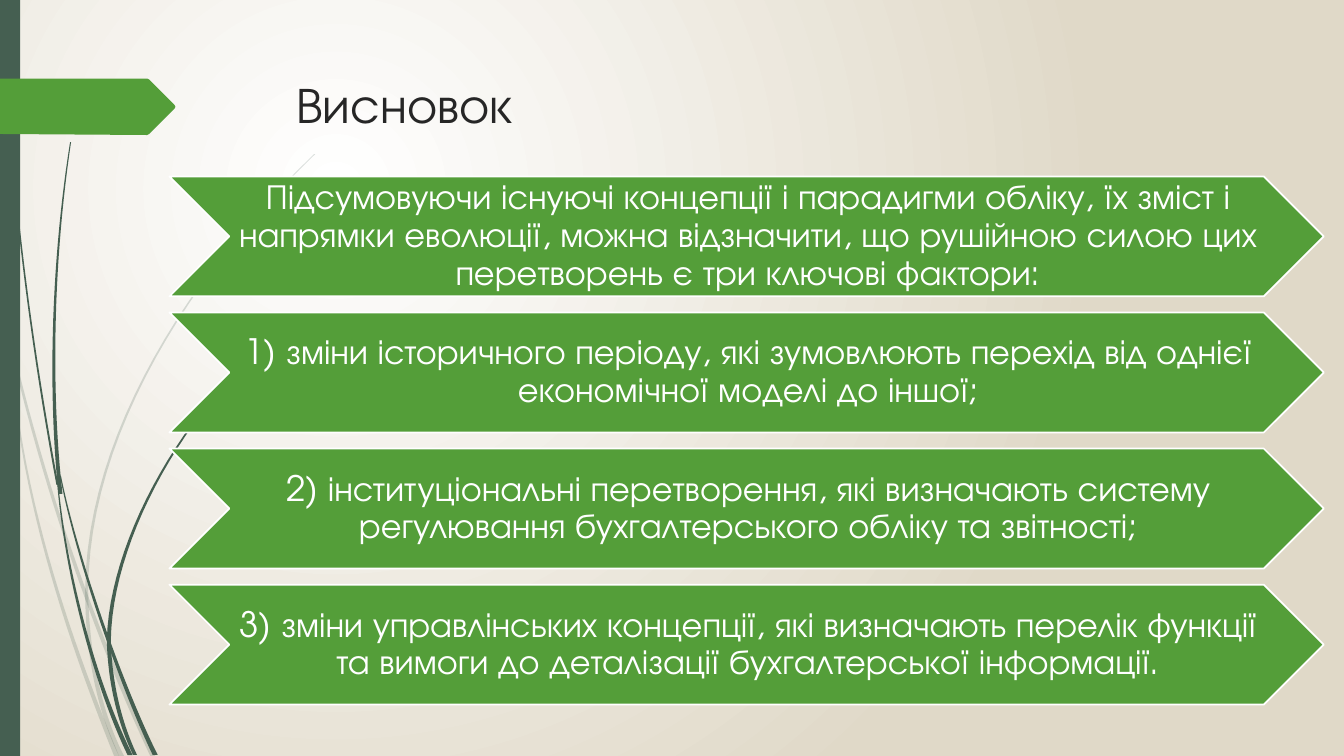
from dataclasses import dataclass

from lxml import etree
from pptx import Presentation
from pptx.dml.color import RGBColor
from pptx.enum.shapes import MSO_SHAPE
from pptx.enum.text import MSO_ANCHOR, PP_ALIGN
from pptx.oxml.ns import qn
from pptx.shapes.autoshape import Shape
from pptx.slide import Slide
from pptx.util import Inches, Pt

RECT = MSO_SHAPE.RECTANGLE
CHEVRON = MSO_SHAPE.CHEVRON
TOP, MIDDLE = MSO_ANCHOR.TOP, MSO_ANCHOR.MIDDLE
LEFT, CENTER = PP_ALIGN.LEFT, PP_ALIGN.CENTER

FONT = "TeX Gyre Adventor"
COLORS = {"white": "FFFFFF", "sand": "E0D9C8", "pine": "455F51", "green": "549E39", "ink": "262626"}
STEPS = 24

Point = tuple[float, float]


@dataclass
class Blade:
    start: Point
    lead: Point
    bend: Point
    end: Point
    tip: float = 0.01
    base: float = 0.04
    alpha: int = 100


@dataclass
class Label:
    text: str
    left: float
    top: float
    width: float
    height: float
    size: int
    color: str
    align: PP_ALIGN = CENTER
    anchor: MSO_ANCHOR = MIDDLE
    inset: tuple[float, float, float, float] = (0.03, 0.02, 0, 0.02)
    spacing: float = 0.9


BLADES = (
    Blade((0, 2.9), (0.3, 4.4), (0.85, 6.1), (1.52, 7.51), 0.02, 0.05, 20),
    Blade((0.11, 3.5), (0.2, 5), (0.75, 6.5), (1.16, 7.51), 0.01, 0.05, 20),
    Blade((3.12, 1.53), (1.9, 2.7), (0.87, 4.3), (0.86, 5.85), 0.01, 0.03, 20),
    Blade((0.86, 5.85), (0.86, 6.5), (1, 7.1), (1.21, 7.51), 0.03, 0.05, 20),
    Blade((0.03, 0), (0.08, 1.6), (0.27, 3.2), (0.57, 4.81), 0.01, 0.02),
    Blade((0.6, 4.72), (0.75, 5.5), (1.2, 6.8), (1.54, 7.49), 0.01, 0.05),
    Blade((0.57, 4.77), (0.65, 5.7), (0.95, 6.8), (1.29, 7.49), 0.01, 0.05),
    Blade((0.7, 1.41), (0.53, 2.5), (0.48, 3.8), (0.6, 4.9), 0.01, 0.04),
    Blade((2.6, 3.44), (1.75, 4.2), (1.1, 5.4), (1.08, 6.35), 0.01, 0.04),
    Blade((1.08, 6.35), (1.09, 6.8), (1.2, 7.2), (1.34, 7.49), 0.04, 0.04),
)
TAG = [(0, 0.78), (1.46, 0.78), (1.48, 0.79), (1.73, 1.04), (1.74, 1.06),
       (1.73, 1.08), (1.48, 1.33), (1.46, 1.34), (0, 1.33)]
TITLE = Label("Висновок", 2.84, 0.68, 9.75, 1.4, 36, "ink", LEFT, TOP, (0.1, 0.05, 0.1, 0.05), 1)
POINTS = (
    "Підсумовуючи існуючі концепції і парадигми обліку, їх зміст і напрямки еволюції, "
    "можна відзначити, що рушійною силою цих перетворень є три ключові фактори:",
    "1) зміни історичного періоду, які зумовлюють перехід від однієї економічної моделі до іншої;",
    "2) інституціональні перетворення, які визначають систему регулювання "
    "бухгалтерського обліку та звітності;",
    "3) зміни управлінських концепції, які визначають перелік функції та вимоги "
    "до деталізації бухгалтерської інформації.",
)


def tint(name: str) -> RGBColor:
    return RGBColor.from_string(COLORS[name])


def paint(shape: Shape, color: str) -> None:
    shape.shadow.inherit = False
    shape.fill.solid()
    shape.fill.fore_color.rgb = tint(color)
    shape.line.fill.background()


def trace(blade: Blade) -> list[Point]:
    near: list[Point] = []
    far: list[Point] = []
    knots = (blade.start, blade.lead, blade.bend, blade.end)
    for step in range(STEPS + 1):
        t = step / STEPS
        u = 1 - t
        mix = (u ** 3, 3 * t * u * u, 3 * t * t * u, t ** 3)
        x, y = (sum(m * knot[axis] for m, knot in zip(mix, knots)) for axis in (0, 1))
        half = (blade.tip * u + blade.base * t) / 2
        near.append((max(x - half, 0), y))
        far.append((x + half, y))
    return near + far[::-1]


def outline(slide: Slide, spots: list[Point], color: str, alpha: int = 100) -> None:
    ends = [(Inches(x), Inches(y)) for x, y in spots]
    pen = slide.shapes.build_freeform(*ends[0])
    pen.add_line_segments(ends[1:], close=True)
    shape = pen.convert_to_shape()
    paint(shape, color)
    if alpha < 100:
        rgb = shape.element.spPr.find(qn("a:solidFill")).find(qn("a:srgbClr"))
        etree.SubElement(rgb, qn("a:alpha"), val=str(alpha * 1000))


def write(slide: Slide, label: Label) -> None:
    box = slide.shapes.add_textbox(*map(Inches, (label.left, label.top, label.width, label.height)))
    frame = box.text_frame
    frame.word_wrap = True
    frame.vertical_anchor = label.anchor
    (frame.margin_left, frame.margin_top,
     frame.margin_right, frame.margin_bottom) = map(Inches, label.inset)
    frame.text = label.text
    para = frame.paragraphs[0]
    para.alignment = label.align
    para.line_spacing = label.spacing
    font = para.runs[0].font
    font.name, font.size = FONT, Pt(label.size)
    font.color.rgb = tint(label.color)


def backdrop(slide: Slide) -> None:
    fill = slide.background.fill
    fill.gradient()
    for stop, color in zip(fill.gradient_stops, ("white", "sand")):
        stop.color.rgb = tint(color)
    grad = next(slide.element.iter(qn("a:gradFill")))
    route = etree.Element(qn("a:path"), path="circle")
    etree.SubElement(route, qn("a:fillToRect"), l="50000", t="50000", r="100000", b="100000")
    grad.replace(grad.find(qn("a:lin")), route)


def main() -> None:
    deck = Presentation()
    deck.slide_width, deck.slide_height = Inches(13.33), Inches(7.5)
    slide = deck.slides.add_slide(deck.slide_layouts[6])
    backdrop(slide)
    for blade in BLADES:
        outline(slide, trace(blade), "pine", blade.alpha)
    bar = slide.shapes.add_shape(RECT, 0, 0, Inches(0.2), Inches(7.5))
    paint(bar, "pine")
    outline(slide, TAG, "green")
    write(slide, TITLE)
    for row, text in enumerate(POINTS):
        top = 1.75 + 1.35 * row
        band = slide.shapes.add_shape(CHEVRON, *map(Inches, (1.68, top, 11.45, 1.19)))
        paint(band, "green")
        band.line.color.rgb = tint("white")
        band.line.width = Pt(1.25)
        write(slide, Label(text, 2.27, top, 10.27, 1.19, 25, "white"))
    deck.save("out.pptx")


if __name__ == "__main__":
    main()
